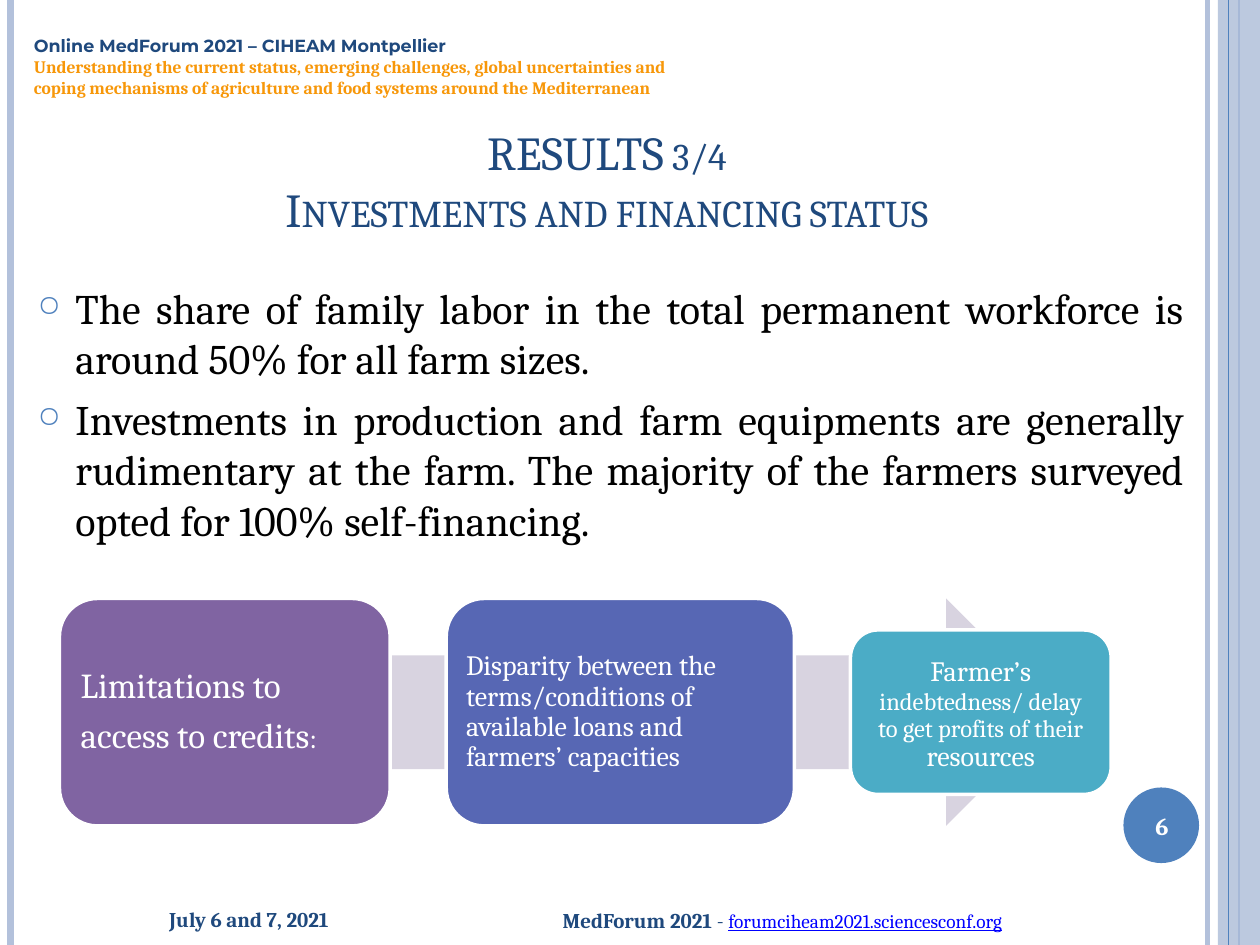
from copy import deepcopy
from lxml.etree import SubElement as Sub
from pptx import Presentation
from pptx.dml.color import RGBColor as RGB
from pptx.enum.shapes import MSO_CONNECTOR as CON, MSO_SHAPE as SHAPE
from pptx.enum.text import MSO_ANCHOR as ANCHOR, MSO_AUTO_SIZE as AUTO, PP_ALIGN as ALIGN
from pptx.oxml.ns import qn
from pptx.util import Pt

NAVY = RGB(0x1F, 0x49, 0x7D)
BLUE = RGB(0x4F, 0x81, 0xBD)
PALE = RGB(0xB3, 0xC1, 0xDB)
GOLD = RGB(0xF7, 0x97, 0x09)
LINK = RGB(0x00, 0x00, 0xFF)
LILAC = RGB(0xD8, 0xD3, 0xE0)
PLUM = RGB(0x80, 0x64, 0xA2)
INDIGO = RGB(0x57, 0x67, 0xB4)
TEAL = RGB(0x4B, 0xAC, 0xC6)
WHITE = RGB(0xFF, 0xFF, 0xFF)
BLACK = RGB(0x00, 0x00, 0x00)

WIDE, HIGH = 720, 540
MID = 407

HEAD = [
    [("Online MedForum 2021 – CIHEAM Montpellier", {"face": "Montserrat"})],
    [("Understanding the current status, emerging challenges, global uncertainties and \n"
      "coping mechanisms of agriculture and food systems around the Mediterranean", {"color": GOLD})],
]
TITLE = ["RESULTS 3/4\nInvestments and financing status"]
BODY = [
    "The share of family labor in the total permanent workforce is around 50% for all farm sizes.",
    "Investments in production and farm equipments are generally rudimentary at the farm. "
    "The majority of the farmers surveyed opted for 100% self-financing.",
]
DATE = ["July 6 and 7, 2021"]
SITE = [[
    ("MedForum 2021 ", {}),
    ("- ", {"bold": False}),
    ("forumciheam2021.sciencesconf.org", {"bold": False, "size": 11, "color": LINK, "under": True}),
]]
RULES = [(690, PALE, 3), (6, PALE, 4.5), (708, BLUE, 1.5), (702, BLUE, 0.75)]
STEPS = [
    (34, 189, 130, PLUM, 20, 5.8, ALIGN.LEFT,
     ["Limitations to", [("access to credits", {}), (":", {"size": 16})]]),
    (255, 199, 130, INDIGO, 16, 5, ALIGN.LEFT,
     ["Disparity between the terms/conditions of available loans and farmers’ capacities"]),
    (486, 149, 94, TEAL, 16, 5, ALIGN.CENTER,
     [[("Farmer’s", {}), (" ", {"size": 20}),
       ("indebtedness/ delay to get profits of their ", {"size": 14}), ("resources", {})]]),
]


def style(run, size=12, face="Cambria", color=NAVY, bold=False, under=False, small=False):
    font = run.font
    font.size, font.name, font.bold = Pt(size), face, bold
    font.color.rgb = color
    if under:
        font.underline = True
    if small:
        run._r.get_or_add_rPr().set("cap", "small")


def bullet(para):
    props = para._p.get_or_add_pPr()
    props.set("marL", str(Pt(21.6)))
    props.set("indent", str(-Pt(21.6)))
    Sub(Sub(props, qn("a:buClr")), qn("a:srgbClr"), val=str(BLUE))
    Sub(props, qn("a:buSzPct"), val="70000")
    Sub(props, qn("a:buChar"), char="○")


def write(shape, paras, align=ALIGN.LEFT, anchor=ANCHOR.TOP, inset=None,
          mark=False, before=0, after=0, lead=None, **fmt):
    frame = shape.text_frame
    frame.word_wrap, frame.auto_size = True, AUTO.NONE
    frame.vertical_anchor = anchor
    if inset is not None:
        frame.margin_left = frame.margin_right = Pt(inset)
        frame.margin_top = frame.margin_bottom = Pt(inset)
    for i, runs in enumerate(paras):
        para = frame.add_paragraph() if i else frame.paragraphs[0]
        if mark:
            bullet(para)
        para.alignment = align
        para.space_before, para.space_after = Pt(before if i else 0), Pt(after)
        if lead:
            para.line_spacing = lead
        for words, extra in [(runs, {})] if isinstance(runs, str) else runs:
            for j, part in enumerate(words.split("\n")):
                if j:
                    para.add_line_break()
                    para._p[-1].append(deepcopy(run._r.rPr))
                run = para.add_run()
                run.text = part
                style(run, **{**fmt, **extra})


def box(x, y, w, h, paras, **fmt):
    write(slide.shapes.add_textbox(Pt(x), Pt(y), Pt(w), Pt(h)), paras, **fmt)


def block(kind, x, y, w, h, color, edge=None):
    shape = slide.shapes.add_shape(kind, Pt(x), Pt(y), Pt(w), Pt(h))
    shape.shadow.inherit = False
    shape.fill.solid()
    shape.fill.fore_color.rgb = color
    if edge:
        shape.line.color.rgb, shape.line.width = edge, Pt(2)
    else:
        shape.line.fill.background()
    return shape


def fade(fill, share):
    tone = fill._xPr.find(".//" + qn("a:srgbClr"))
    Sub(tone, qn("a:alpha"), val=str(share * 1000))


def rule(x, color, width):
    line = slide.shapes.add_connector(CON.STRAIGHT, Pt(x), 0, Pt(x), Pt(HIGH))
    line.line.color.rgb, line.line.width = color, Pt(width)
    Sub(line._element.spPr, qn("a:effectLst"))


deck = Presentation()
deck.slide_width, deck.slide_height = Pt(WIDE), Pt(HIGH)
slide = deck.slides.add_slide(deck.slide_layouts[5])

for spot in RULES[:3]:
    rule(*spot)
band = block(SHAPE.RECTANGLE, 696, 0, 24, HIGH, PALE)
fade(band.fill, 87)
rule(*RULES[3])
block(SHAPE.OVAL, 642, 450, 43.2, 43.2, BLUE)

box(36.5, 510.5, 158.5, 30, DATE, align=ALIGN.RIGHT, anchor=ANCHOR.MIDDLE, bold=True)
box(314.5, 511, 371, 29, SITE, anchor=ANCHOR.MIDDLE, bold=True)
box(12.3, 16.5, 433, 44, HEAD, size=10, bold=True)

title = slide.shapes.title
title.left, title.top, title.width, title.height = Pt(12.3), Pt(88), Pt(669), Pt(51)
write(title, TITLE, align=ALIGN.CENTER, anchor=ANCHOR.BOTTOM, size=27, small=True)

box(14.4, 157.7, 669, 166, BODY, align=ALIGN.JUSTIFY, mark=True, before=6, size=24, color=BLACK)
box(640, 451.5, 48, 41, ["6"], align=ALIGN.CENTER, anchor=ANCHOR.MIDDLE,
    size=14, color=WHITE, bold=True)

block(SHAPE.RIGHT_ARROW, 62, MID - 65, 543.6, 130, LILAC)
for x, w, h, color, size, inset, align, paras in STEPS:
    step = block(SHAPE.ROUNDED_RECTANGLE, x, MID - h / 2, w, h, color, WHITE)
    write(step, paras, align=align, anchor=ANCHOR.MIDDLE, inset=inset,
          lead=0.9, after=size * 0.35, size=size, color=WHITE)

deck.save("out.pptx")
